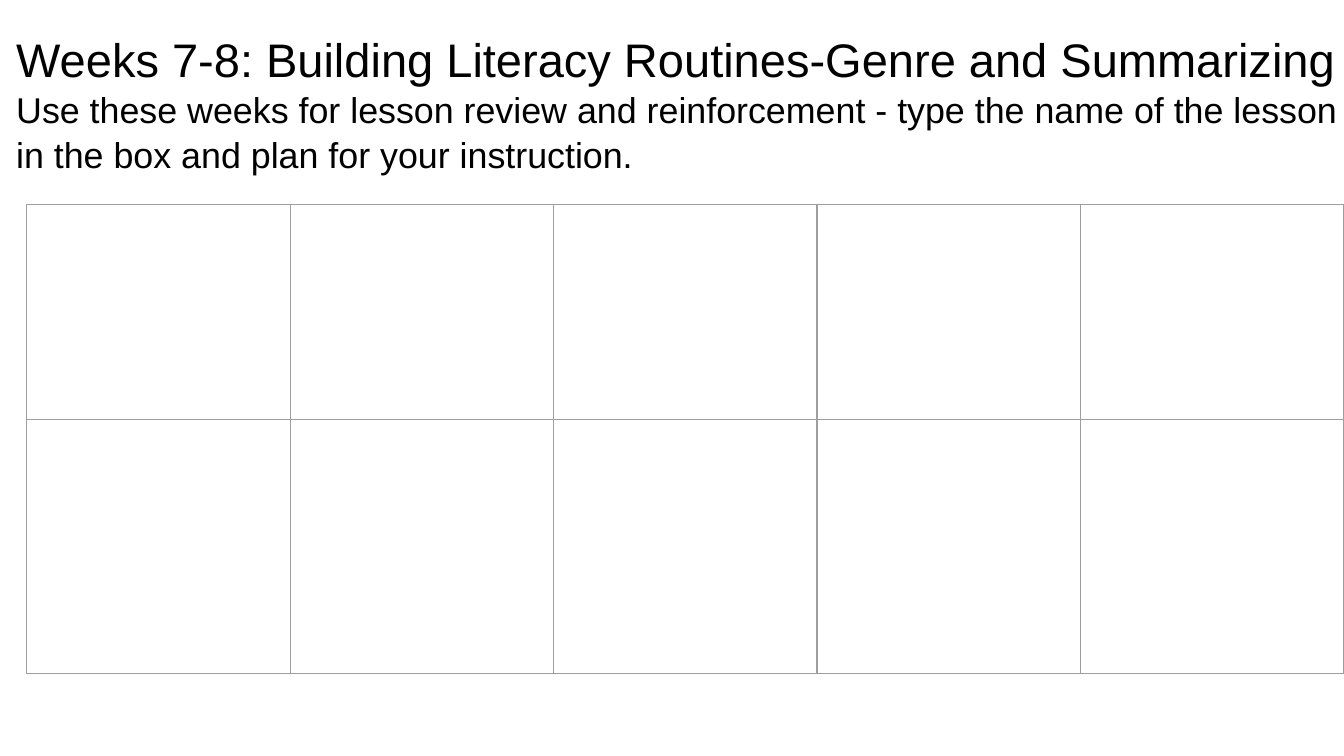
from dataclasses import dataclass

from lxml import etree
from pptx import Presentation
from pptx.dml.color import RGBColor
from pptx.enum.text import MSO_ANCHOR, MSO_AUTO_SIZE, PP_ALIGN
from pptx.oxml.ns import qn
from pptx.util import Pt

TOP = MSO_ANCHOR.TOP
NO_AUTOFIT = MSO_AUTO_SIZE.NONE
LEFT = PP_ALIGN.LEFT
TITLE_ONLY_LAYOUT = 5
BORDER_TAGS = ("a:lnL", "a:lnR", "a:lnT", "a:lnB")


@dataclass(frozen=True)
class Theme:
    """Colours, font and sizes of the slide."""

    font: str = "Arial"
    text: str = "000000"
    background: str = "FFFFFF"
    border: str = "9E9E9E"
    border_width: float = 0.75
    heading_size: float = 25.2
    instruction_size: float = 19.2
    line_spacing: float = 1.04


THEME = Theme()
HEADING = "Weeks 7-8: Building Literacy Routines-Genre and Summarizing"
INSTRUCTION = (
    "Use these weeks for lesson review and reinforcement - type the name of "
    "the lesson in the box and plan for your instruction."
)
WEEK_HEIGHTS = (115.2, 136.08)
DAYS = 5
DAY_WIDTH = 141.12


def format_paragraph(paragraph, size):
    """Apply the theme to a title paragraph at the given size."""
    paragraph.alignment = LEFT
    paragraph.line_spacing = THEME.line_spacing
    paragraph.space_before = paragraph.space_after = Pt(0)
    for run in paragraph.runs:
        run.font.name = THEME.font
        run.font.size = Pt(size)
        run.font.color.rgb = RGBColor.from_string(THEME.text)


def fill_title(title):
    """Place the title and write the heading with its instruction."""
    title.left, title.top = Pt(1.44), Pt(6.48)
    title.width, title.height = Pt(738.72), Pt(45.36)
    frame = title.text_frame
    frame.word_wrap = True
    frame.auto_size = NO_AUTOFIT
    frame.vertical_anchor = TOP
    frame.margin_left = frame.margin_right = Pt(7.2)
    frame.margin_top = frame.margin_bottom = Pt(8.4)
    frame.text = f"{HEADING}\n{INSTRUCTION}"
    sizes = (THEME.heading_size, THEME.instruction_size)
    for paragraph, size in zip(frame.paragraphs, sizes):
        format_paragraph(paragraph, size)


def outline_cell(cell):
    """Draw a thin line on all four sides of a cell."""
    properties = cell._tc.get_or_add_tcPr()
    for position, tag in enumerate(BORDER_TAGS):
        line = etree.Element(qn(tag), w=str(Pt(THEME.border_width)))
        fill = etree.SubElement(line, qn("a:solidFill"))
        etree.SubElement(fill, qn("a:srgbClr"), val=THEME.border)
        properties.insert(position, line)


def add_lesson_grid(slide):
    """Add the empty planning table with a row per week."""
    frame = slide.shapes.add_table(
        len(WEEK_HEIGHTS), DAYS, Pt(14.4), Pt(109.44),
        Pt(DAY_WIDTH * DAYS), Pt(sum(WEEK_HEIGHTS)),
    )
    table = frame.table
    table.first_row = table.horz_banding = False
    for column in table.columns:
        column.width = Pt(DAY_WIDTH)
    for row, height in zip(table.rows, WEEK_HEIGHTS):
        row.height = Pt(height)
    for cell in table.iter_cells():
        cell.fill.background()
        outline_cell(cell)


def main():
    """Build and save the planning slide."""
    presentation = Presentation()
    presentation.slide_width, presentation.slide_height = Pt(720), Pt(405)
    layout = presentation.slide_layouts[TITLE_ONLY_LAYOUT]
    slide = presentation.slides.add_slide(layout)
    background = slide.background.fill
    background.solid()
    background.fore_color.rgb = RGBColor.from_string(THEME.background)
    add_lesson_grid(slide)
    fill_title(slide.shapes.title)
    presentation.save("out.pptx")


if __name__ == "__main__":
    main()
